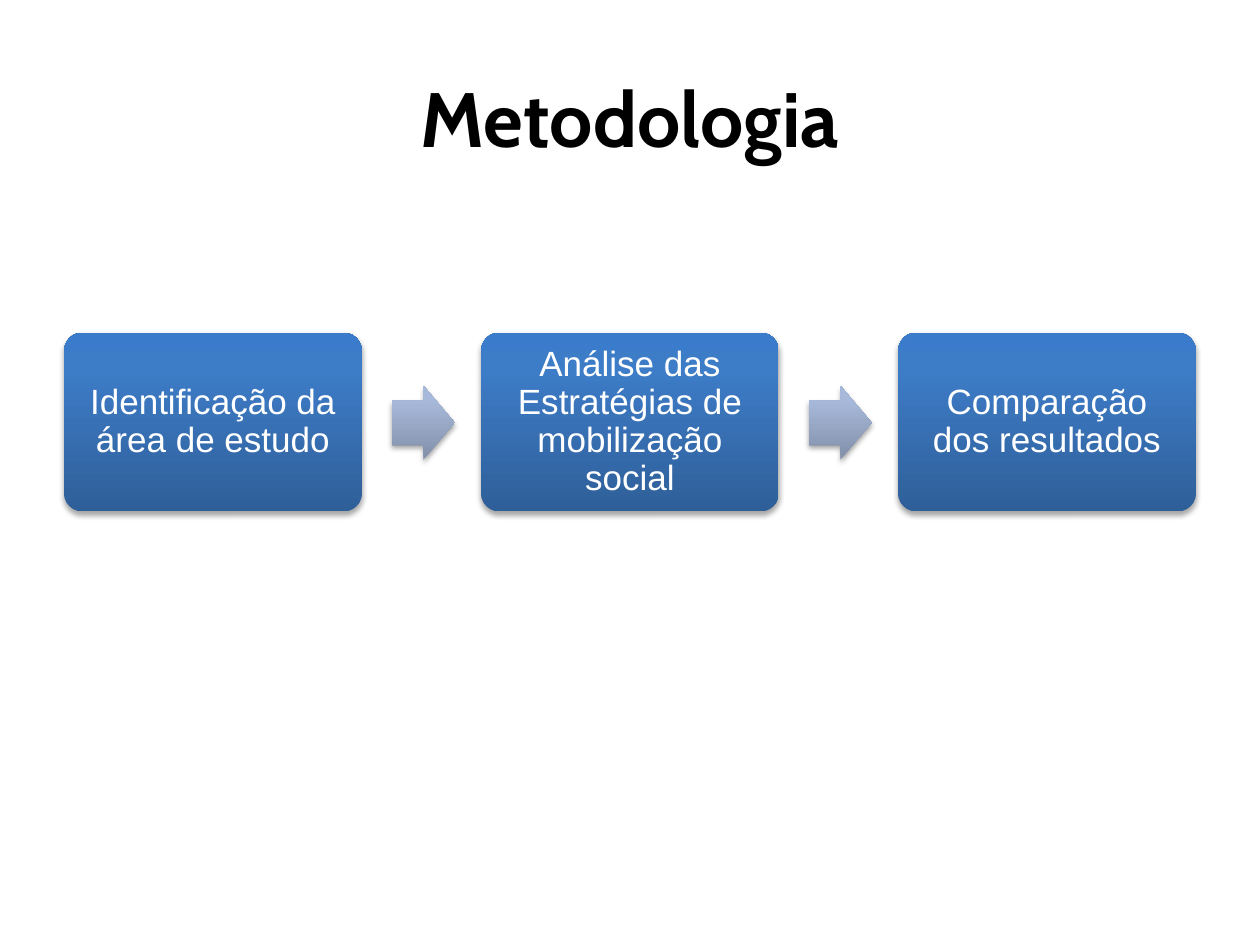
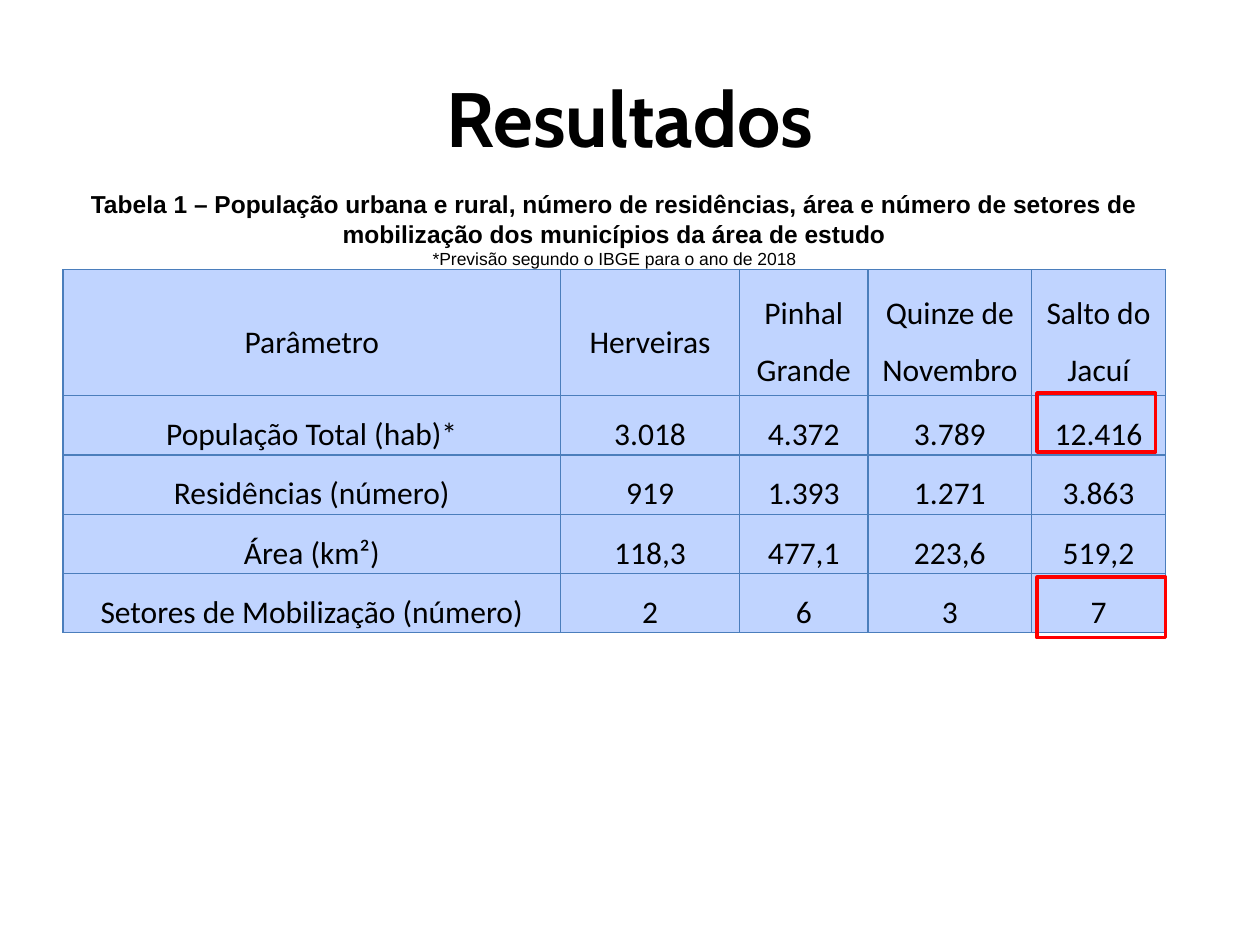
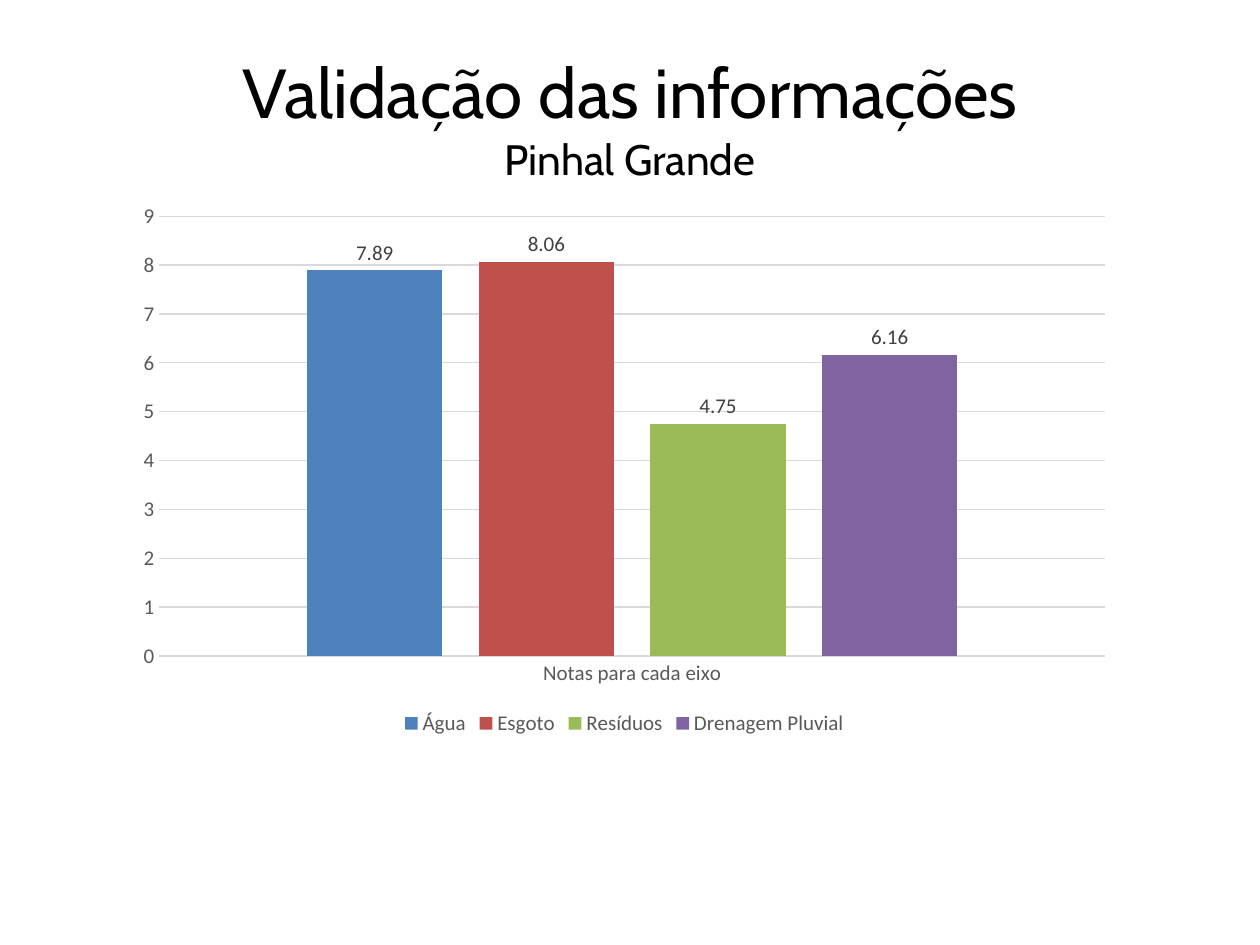
"""Build three slides: methodology flow, results table and validation chart."""
from copy import deepcopy
from dataclasses import dataclass
from typing import Any

from lxml import etree
from pptx import Presentation
from pptx.chart.data import CategoryChartData
from pptx.dml.color import RGBColor
from pptx.enum.chart import XL_CHART_TYPE, XL_LABEL_POSITION, XL_LEGEND_POSITION, XL_TICK_MARK
from pptx.enum.shapes import MSO_SHAPE
from pptx.enum.text import MSO_ANCHOR, MSO_AUTO_SIZE, PP_ALIGN
from pptx.oxml.ns import qn
from pptx.util import Pt

CENTER = PP_ALIGN.CENTER
MIDDLE = MSO_ANCHOR.MIDDLE
NO_AUTOFIT = MSO_AUTO_SIZE.NONE
NO_TICKS = XL_TICK_MARK.NONE
OUTSIDE_END = XL_LABEL_POSITION.OUTSIDE_END
LEGEND_BOTTOM = XL_LEGEND_POSITION.BOTTOM
CLUSTERED = XL_CHART_TYPE.COLUMN_CLUSTERED
CARD, ARROW, RECTANGLE = MSO_SHAPE.ROUNDED_RECTANGLE, MSO_SHAPE.RIGHT_ARROW, MSO_SHAPE.RECTANGLE
TITLE_ONLY = 5

COLORS = {
    "text": "000000", "card_text": "FFFFFF", "shadow": "000000",
    "cell": "C0D4FF", "cell_border": "4B7EBC", "highlight": "FF0000",
    "axis_text": "595959", "label_text": "404040", "grid": "D9D9D9",
    "Água": "4F81BD", "Esgoto": "C0504D", "Resíduos": "9BBB59", "Drenagem Pluvial": "8064A2",
}
CARD_STOPS = ((0, "2F5F99"), (80, "3D7CC7"), (100, "3A7CCB"))
ARROW_STOPS = ((0, "818FA8"), (80, "A7B9DA"), (100, "A7BADC"))

FONTS = {
    "title": {"name": "Cabin", "size": Pt(44), "bold": True},
    "long_title": {"name": "Cabin", "size": Pt(39.6), "bold": False},
    "subtitle": {"name": "Cabin", "size": Pt(24.3), "bold": False},
    "card": {"name": "Arial", "size": Pt(20)},
    "caption": {"name": "Arial", "size": Pt(14), "bold": True},
    "note": {"name": "Arial", "size": Pt(10), "bold": False},
    "cell": {"name": "Calibri", "size": Pt(18), "bold": False},
    "chart": {"name": "Calibri", "size": Pt(12), "bold": False},
}


@dataclass(frozen=True)
class Box:
    """Place and size in points."""

    left: float
    top: float
    width: float
    height: float

    def lengths(self) -> tuple:
        """Return the four lengths for python-pptx."""
        return Pt(self.left), Pt(self.top), Pt(self.width), Pt(self.height)


@dataclass(frozen=True)
class Line:
    """One line of text with the name of its font."""

    text: str
    font: str


TITLE_BOX = Box(36, 21.6, 648, 90)
FIRST_CARD = Box(36.7, 190.1, 170, 102.2)
FIRST_ARROW = Box(223.9, 220.3, 36, 42.5)
STEP_PITCH = 238.3
STEPS = ("Identificação da área de estudo", "Análise das Estratégias de mobilização social",
         "Comparação dos resultados")

CAPTION_BOX = Box(36, 104.4, 630, 53.3)
CAPTION = (
    Line("Tabela 1 – População urbana e rural, número de residências, área e número de setores "
         "de mobilização dos municípios da área de estudo", "caption"),
    Line("*Previsão segundo o IBGE para o ano de 2018", "note"),
)
TABLE_BOX = Box(36, 154.1, 630, 207.6)
COLUMN_WIDTHS = (284.4, 102.2, 73.5, 93.5, 76.4)
ROW_HEIGHTS = (72,) + (33.9,) * 4
MUNICIPALITIES = (
    ("Parâmetro", "Herveiras", "Pinhal Grande", "Quinze de Novembro", "Salto do Jacuí"),
    ("População Total (hab)*", "3.018", "4.372", "3.789", "12.416"),
    ("Residências (número)", "919", "1.393", "1.271", "3.863"),
    ("Área (km²)", "118,3", "477,1", "223,6", "519,2"),
    ("Setores de Mobilização (número)", "2", "6", "3", "7"),
)
HIGHLIGHTS = (Box(592.6, 224.6, 67.7, 33.8), Box(592.6, 329.8, 73.4, 34.6))

CHART_BOX = Box(70.6, 110.2, 572.4, 313.2)
SCORES = {"Água": 7.89, "Esgoto": 8.06, "Resíduos": 4.75, "Drenagem Pluvial": 6.16}


def apply(target: Any, formats: dict) -> None:
    """Set each format value as an attribute of the target."""
    for attribute, value in formats.items():
        setattr(target, attribute, value)


def rgb(color: str) -> RGBColor:
    """Look up a named colour."""
    return RGBColor.from_string(COLORS[color])


def set_font(font: Any, style: str, color: str = "text") -> None:
    """Apply a named font style and colour."""
    apply(font, FONTS[style])
    font.color.rgb = rgb(color)


def set_line(line: Any, color: str, width: float) -> None:
    """Give a line its colour and width."""
    line.color.rgb = rgb(color)
    line.width = Pt(width)


def write(paragraph: Any, line: Line, color: str = "text", spacing: float = 1.0) -> Any:
    """Write one centred line and return its run."""
    apply(paragraph, {"alignment": CENTER, "line_spacing": spacing})
    run = paragraph.add_run()
    run.text = line.text
    set_font(run.font, line.font, color)
    return run


def add_titled_slide(deck: Any, *lines: Line) -> Any:
    """Add a slide whose title holds the lines, separated by line breaks."""
    slide = deck.slides.add_slide(deck.slide_layouts[TITLE_ONLY])
    title = slide.shapes.title
    apply(title, dict(zip(("left", "top", "width", "height"), TITLE_BOX.lengths())))
    apply(title.text_frame, {"vertical_anchor": MIDDLE, "word_wrap": True, "auto_size": NO_AUTOFIT})
    paragraph = title.text_frame.paragraphs[0]
    run = write(paragraph, lines[0])
    for line in lines[1:]:
        paragraph.add_line_break()
        line_break = paragraph._p.findall(qn("a:br"))[-1]
        line_break.append(deepcopy(run._r.rPr))
        run = write(paragraph, line)
    return slide


def add_element(parent: Any, tag: str, **attributes: Any) -> Any:
    """Append an XML element with the given attributes."""
    return etree.SubElement(parent, qn(tag), {key: str(value) for key, value in attributes.items()})


def add_step_shape(slide: Any, kind: Any, box: Box, stops: tuple, adjustments: tuple) -> Any:
    """Add a shape with an upward gradient and a soft shadow."""
    shape = slide.shapes.add_shape(kind, *box.lengths())
    for index, value in enumerate(adjustments):
        shape.adjustments[index] = value
    shape.line.fill.background()
    shape.fill.gradient()
    shape.fill.gradient_angle = 90
    properties = shape._element.spPr
    stop_list = properties.find(".//" + qn("a:gsLst"))
    for default_stop in list(stop_list):
        stop_list.remove(default_stop)
    for percent, color in stops:
        add_element(add_element(stop_list, "a:gs", pos=percent * 1000), "a:srgbClr", val=color)
    shape.shadow.inherit = False
    shadow = add_element(properties.find(qn("a:effectLst")), "a:outerShdw", blurRad=int(Pt(3.1)),
                         dist=int(Pt(1.8)), dir=90 * 60000, rotWithShape=0)
    add_element(add_element(shadow, "a:srgbClr", val=COLORS["shadow"]), "a:alpha", val=35000)
    return shape


def add_steps(slide: Any) -> None:
    """Draw the step cards with an arrow between neighbours."""
    margin = Pt(8.6)
    for index, step in enumerate(STEPS):
        shift = index * STEP_PITCH
        card_box = Box(FIRST_CARD.left + shift, FIRST_CARD.top, FIRST_CARD.width, FIRST_CARD.height)
        card = add_step_shape(slide, CARD, card_box, CARD_STOPS, (0.1,))
        apply(card.text_frame, {"word_wrap": True, "vertical_anchor": MIDDLE,
                                "margin_left": margin, "margin_right": margin,
                                "margin_top": margin, "margin_bottom": margin})
        write(card.text_frame.paragraphs[0], Line(step, "card"), "card_text", 0.9)
        if index < len(STEPS) - 1:
            arrow_box = Box(FIRST_ARROW.left + shift, FIRST_ARROW.top,
                            FIRST_ARROW.width, FIRST_ARROW.height)
            add_step_shape(slide, ARROW, arrow_box, ARROW_STOPS, (0.6, 0.5))


def format_cell(cell: Any, text: str) -> None:
    """Write a table cell with its borders and fill."""
    apply(cell, {"vertical_anchor": MIDDLE, "margin_left": Pt(5), "margin_right": Pt(5),
                 "margin_top": Pt(0), "margin_bottom": Pt(0)})
    write(cell.text_frame.paragraphs[0], Line(text, "cell"), spacing=1.5)
    properties = cell._tc.get_or_add_tcPr()
    for side in ("a:lnL", "a:lnR", "a:lnT", "a:lnB"):
        border = add_element(properties, side, w=int(Pt(0.75)))
        add_element(add_element(border, "a:solidFill"), "a:srgbClr", val=COLORS["cell_border"])
    cell.fill.solid()
    cell.fill.fore_color.rgb = rgb("cell")


def add_municipalities(slide: Any) -> None:
    """Add the table of municipalities."""
    table = slide.shapes.add_table(len(ROW_HEIGHTS), len(COLUMN_WIDTHS), *TABLE_BOX.lengths()).table
    apply(table, {"first_row": False, "horz_banding": False})
    for column, width in zip(table.columns, COLUMN_WIDTHS):
        column.width = Pt(width)
    for row, height, values in zip(table.rows, ROW_HEIGHTS, MUNICIPALITIES):
        row.height = Pt(height)
        for cell, value in zip(row.cells, values):
            format_cell(cell, value)


def add_caption(slide: Any) -> None:
    """Add the table caption and its note."""
    frame = slide.shapes.add_textbox(*CAPTION_BOX.lengths()).text_frame
    apply(frame, {"word_wrap": True, "vertical_anchor": MIDDLE})
    heading, note = CAPTION
    write(frame.paragraphs[0], heading)
    write(frame.add_paragraph(), note)


def add_highlight(slide: Any, box: Box) -> None:
    """Outline one table value."""
    outline = slide.shapes.add_shape(RECTANGLE, *box.lengths())
    outline.shadow.inherit = False
    outline.fill.background()
    set_line(outline.line, "highlight", 2)


def add_scores(slide: Any) -> None:
    """Add the column chart of scores."""
    scores = CategoryChartData()
    scores.categories = ["Notas para cada eixo"]
    for name, score in SCORES.items():
        scores.add_series(name, [score])
    chart = slide.shapes.add_chart(CLUSTERED, *CHART_BOX.lengths(), scores).chart
    apply(chart, {"has_title": False, "has_legend": True})
    set_font(chart.font, "chart", "axis_text")
    apply(chart.legend, {"position": LEGEND_BOTTOM, "include_in_layout": False})
    set_font(chart.legend.font, "chart", "axis_text")
    for axis in (chart.category_axis, chart.value_axis):
        apply(axis, {"major_tick_mark": NO_TICKS, "minor_tick_mark": NO_TICKS})
        set_font(axis.tick_labels.font, "chart", "axis_text")
    set_line(chart.category_axis.format.line, "grid", 0.75)
    apply(chart.value_axis, {"minimum_scale": 0, "maximum_scale": 9, "major_unit": 1})
    chart.value_axis.format.line.fill.background()
    set_line(chart.value_axis.major_gridlines.format.line, "grid", 0.75)
    plot = chart.plots[0]
    apply(plot, {"gap_width": 219, "overlap": -27, "vary_by_categories": False})
    for series in plot.series:
        series.format.fill.solid()
        series.format.fill.fore_color.rgb = rgb(series.name)
        apply(series.data_labels, {"show_value": True, "position": OUTSIDE_END})
        set_font(series.data_labels.font, "chart", "label_text")


def main() -> None:
    """Build and save the slides."""
    deck = Presentation()
    apply(deck, {"slide_width": Pt(720), "slide_height": Pt(540)})
    add_steps(add_titled_slide(deck, Line("Metodologia", "title")))
    results = add_titled_slide(deck, Line("Resultados", "title"))
    add_municipalities(results)
    add_caption(results)
    for box in HIGHLIGHTS:
        add_highlight(results, box)
    add_scores(add_titled_slide(deck, Line("Validação das informações", "long_title"),
                                Line("Pinhal Grande", "subtitle")))
    deck.save("out.pptx")


if __name__ == "__main__":
    main()
